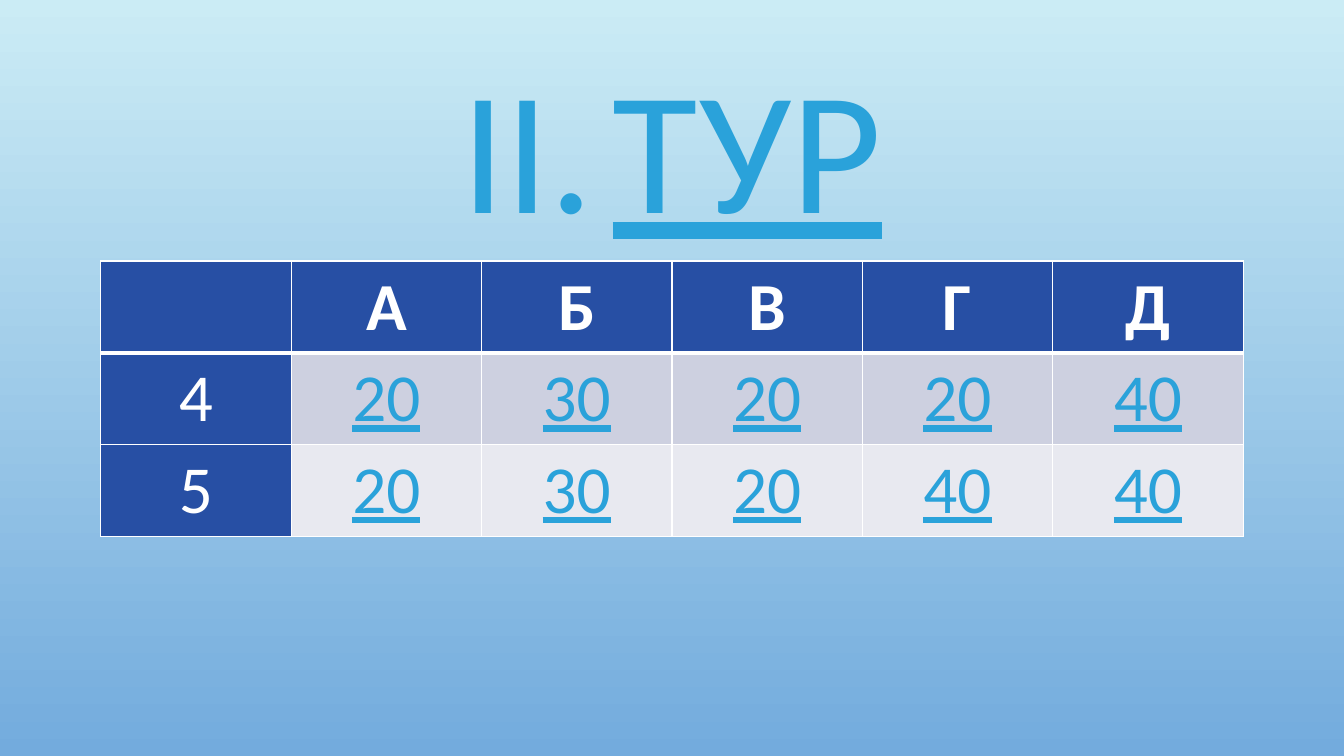
"""Build the quiz slide for round two with its score table."""
from lxml import etree
from pptx import Presentation
from pptx.dml.color import RGBColor
from pptx.enum import text
from pptx.oxml import ns
from pptx.util import Inches, Pt

WHITE = RGBColor(0xFF, 0xFF, 0xFF)
LINK_BLUE = RGBColor(0x2A, 0xA2, 0xDA)
HEADER_BLUE = RGBColor(0x27, 0x4F, 0xA4)
BAND_FILLS = [RGBColor(0xCD, 0xD0, 0xE0), RGBColor(0xE8, 0xE9, 0xF0)]
SKY_TOP = RGBColor(0xCB, 0xEC, 0xF5)
SKY_BOTTOM = RGBColor(0x73, 0xAB, 0xDD)


def write_text(frame, wording, size=48, color=LINK_BLUE, bold=False, underline=False):
    paragraph = frame.paragraphs[0]
    paragraph.alignment = text.PP_ALIGN.CENTER
    run = paragraph.add_run()
    run.text = wording
    run.font.name = "Calibri"
    run.font.size = Pt(size)
    run.font.color.rgb = color
    run.font.bold = bold
    run.font.underline = underline
    return paragraph


def add_border(cell, side, width):
    line = etree.SubElement(cell._tc.get_or_add_tcPr(), ns.qn(f"a:ln{side}"), w=str(Pt(width)))
    fill = etree.SubElement(line, ns.qn("a:solidFill"))
    etree.SubElement(fill, ns.qn("a:srgbClr"), val=str(WHITE))


presentation = Presentation()
presentation.slide_width = Inches(13.33)
presentation.slide_height = Inches(7.5)
slide = presentation.slides.add_slide(presentation.slide_layouts[6])

background = slide.background.fill
background.gradient()
background.gradient_angle = 270
for stop, color in zip(background.gradient_stops, [SKY_TOP, SKY_BOTTOM]):
    stop.color.rgb = color

title = slide.shapes.add_textbox(Inches(1), Inches(0.68), Inches(11.33), Inches(1.75))
title.text_frame.word_wrap = True
title.text_frame.vertical_anchor = text.MSO_ANCHOR.MIDDLE
heading = write_text(title.text_frame, "ТУР", size=125, underline=True)
heading.line_spacing = 0.9
properties = heading._p.get_or_add_pPr()
properties.set("marL", str(Inches(1.5)))
properties.set("indent", str(Inches(-1.5)))
etree.SubElement(properties, ns.qn("a:buAutoNum"), type="romanUcPeriod", startAt="2")

rows = [
    ["", "А", "Б", "В", "Г", "Д"],
    ["4", "20", "30", "20", "20", "40"],
    ["5", "20", "30", "20", "40", "40"],
]
table = slide.shapes.add_table(
    len(rows), len(rows[0]), Inches(1), Inches(2.59), Inches(11.33), Inches(2.73)
).table
for row_index, row in enumerate(rows):
    for column_index, wording in enumerate(row):
        cell = table.cell(row_index, column_index)
        is_header = row_index == 0
        is_score = not is_header and column_index > 0
        add_border(cell, "L", 1)
        add_border(cell, "R", 1)
        add_border(cell, "T", 3 if row_index == 1 else 1)
        add_border(cell, "B", 3 if is_header else 1)
        cell.fill.solid()
        cell.fill.fore_color.rgb = BAND_FILLS[row_index - 1] if is_score else HEADER_BLUE
        if wording:
            write_text(cell.text_frame, wording, color=LINK_BLUE if is_score else WHITE,
                       bold=is_header, underline=is_score)

presentation.save("out.pptx")
